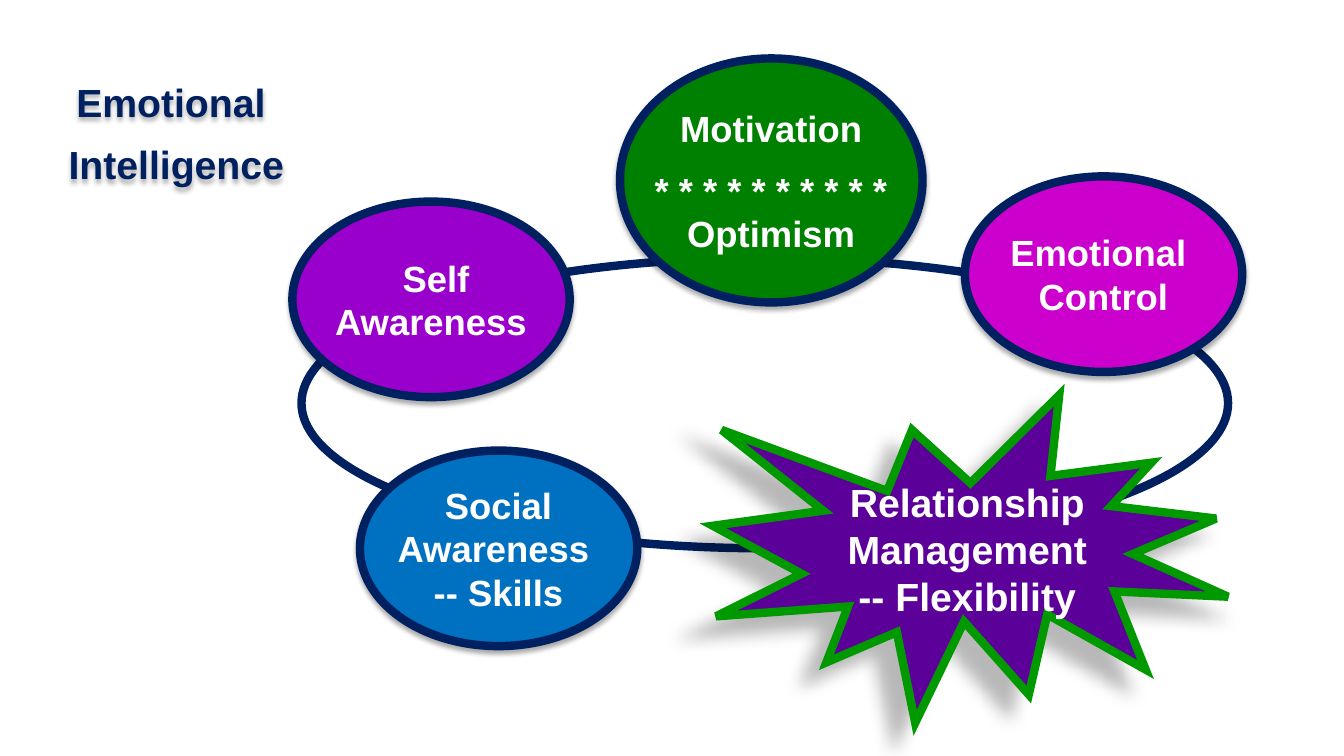
from lxml import etree
from pptx import Presentation
from pptx.dml.color import RGBColor
from pptx.enum import shapes, text
from pptx.oxml.ns import qn
from pptx.util import Inches, Pt

NAVY = RGBColor(0x00, 0x20, 0x60)
WHITE = RGBColor(0xFF, 0xFF, 0xFF)
BLUE = RGBColor(0x00, 0x70, 0xC0)
MAGENTA = RGBColor(0xCC, 0x00, 0xCC)
GREEN = RGBColor(0x00, 0x80, 0x00)
PURPLE = RGBColor(0x99, 0x00, 0xCC)
VIOLET = RGBColor(0x5C, 0x00, 0x9A)
BRIGHT_GREEN = RGBColor(0x00, 0x99, 0x00)

OVAL = shapes.MSO_SHAPE.OVAL
BURST = shapes.MSO_SHAPE.EXPLOSION1
SOFT_SHADOW = (32, 3.5, 2.2, 90)
DEEP_SHADOW = (28, 11.8, 19.7, 141)

# lines, left, top, width, height, fill
COMPETENCIES = [
    (["Social", "Awareness ", "-- Skills"], 3.57, 4.47, 2.75, 1.94, BLUE),
    (["Emotional ", "Control"], 9.57, 1.75, 2.75, 1.94, MAGENTA),
    (["Motivation", " * * * * * * * * * * ", "Optimism"], 6.15, 0.58, 3, 2.42, GREEN),
    ([" Self", "Awareness"], 2.9, 2, 2.75, 1.94, PURPLE),
]


def add_shadow(sp, opacity, blur, distance, angle):
    """Opacity in percent, blur and distance in points, angle in degrees."""
    sp.shadow.inherit = False
    effects = sp.element.spPr.find(qn("a:effectLst"))
    shadow = etree.SubElement(
        effects, qn("a:outerShdw"), blurRad=str(Pt(blur)), dist=str(Pt(distance)),
        dir=str(angle * 60000), algn="ctr", rotWithShape="0")
    color = etree.SubElement(shadow, qn("a:srgbClr"), val="000000")
    etree.SubElement(color, qn("a:alpha"), val=str(opacity * 1000))


def set_lines(sp, lines, size, color, wrap=True, gap=0):
    """Centred bold lines; gap is the space in points above the second."""
    tf = sp.text_frame
    tf.text = "\n".join(lines)
    tf.word_wrap = wrap
    tf.auto_size = text.MSO_AUTO_SIZE.NONE
    tf.vertical_anchor = text.MSO_ANCHOR.MIDDLE
    for i, p in enumerate(tf.paragraphs):
        p.alignment = text.PP_ALIGN.CENTER
        p.space_before = Pt(gap if i == 1 else 0)
        font = p.runs[0].font
        font.name, font.size, font.bold = "Arial", Pt(size), True
        font.color.rgb = color


def add_outlined(slide, kind, left, top, width, height, fill, line=NAVY):
    sp = slide.shapes.add_shape(
        kind, Inches(left), Inches(top), Inches(width), Inches(height))
    sp.shadow.inherit = False
    sp.fill.solid()
    sp.fill.fore_color.rgb = fill
    sp.line.color.rgb = line
    sp.line.width = Pt(6)
    etree.SubElement(sp.element.spPr.find(qn("a:ln")), qn("a:miter"), lim="800000")
    return sp


def add_title(slide):
    title = slide.shapes.title
    title.left, title.top = Inches(0.35), Inches(0.64)
    title.width, title.height = Inches(2.69), Inches(1.36)
    set_lines(title, ["Emotional", " Intelligence"], 28, NAVY, gap=11)
    add_shadow(title, *SOFT_SHADOW)


def main():
    prs = Presentation()
    prs.slide_width, prs.slide_height = Inches(13.33), Inches(7.5)
    slide = prs.slides.add_slide(prs.slide_layouts[5])
    add_title(slide)

    add_outlined(slide, OVAL, 2.99, 2.56, 9.19, 2.88, WHITE)
    for lines, left, top, width, height, fill in COMPETENCIES:
        oval = add_outlined(slide, OVAL, left, top, width, height, fill)
        add_shadow(oval, *SOFT_SHADOW)
        set_lines(oval, lines, 26, WHITE, wrap=False,
                  gap=13 if fill == GREEN else 0)

    burst = add_outlined(slide, BURST, 7.07, 3.92, 5.11, 3.25, VIOLET, BRIGHT_GREEN)
    add_shadow(burst, *DEEP_SHADOW)
    set_lines(burst, ["Relationship Management", "-- Flexibility"], 28, WHITE)

    prs.save("out.pptx")


if __name__ == "__main__":
    main()
